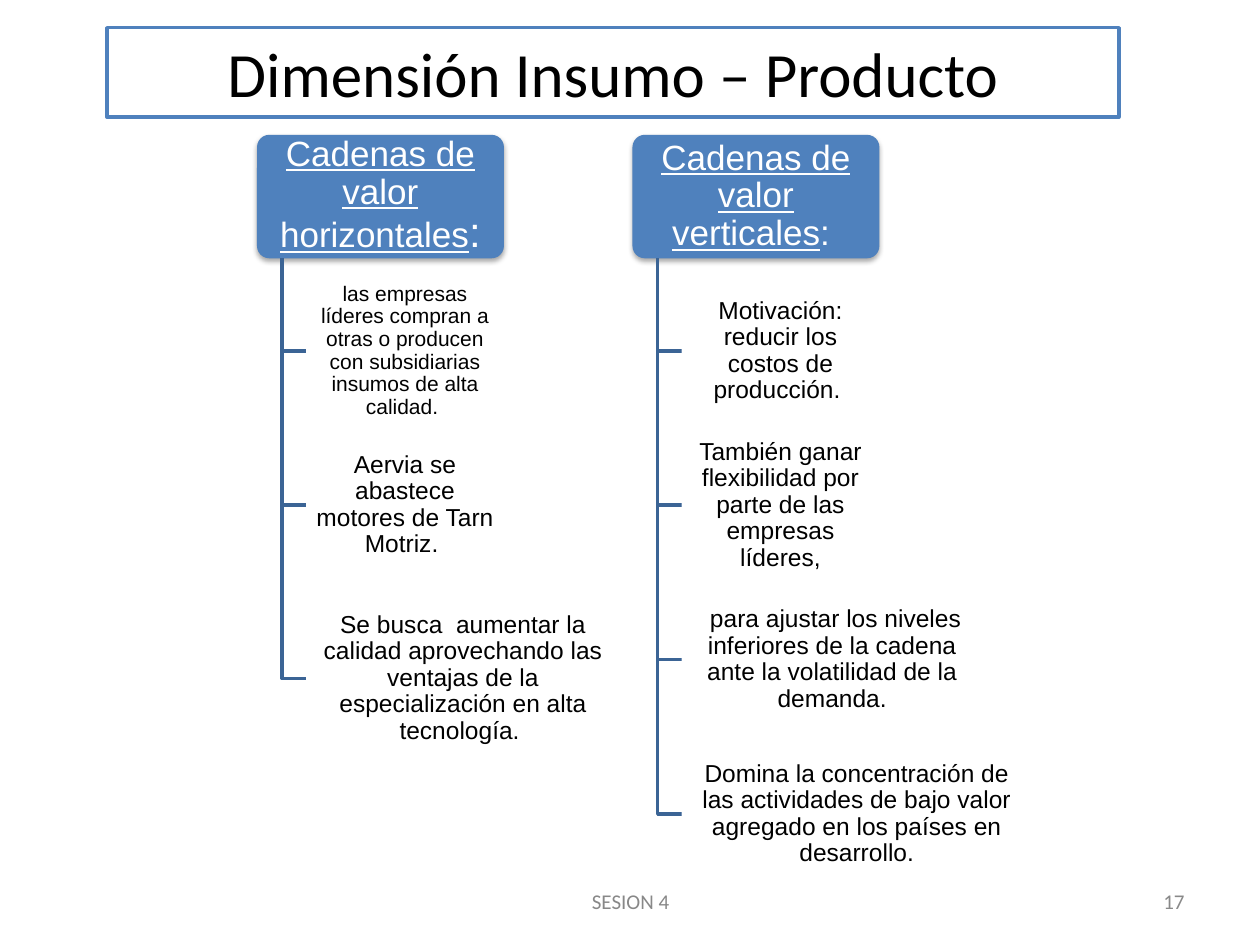
from lxml.etree import SubElement
from pptx import Presentation
from pptx.dml.color import RGBColor
from pptx.enum.shapes import MSO_SHAPE as Shape
from pptx.enum.text import MSO_ANCHOR as Anchor, PP_ALIGN as Align
from pptx.oxml.ns import qn
from pptx.util import Inches, Pt

TITLE = "Dimensión Insumo – Producto"
CHAINS = [
    {
        "head": [("Cadenas de valor horizontales", 20, True), (":", 24, False)],
        "cards": [
            ("las empresas líderes compran a otras o producen con subsidiarias "
             "insumos de alta calidad. ", 12, 1.57, 0.98),
            ("Aervia se abastece motores de Tarn Motriz. ", 14, 1.57, 0.98),
            ("Se busca  aumentar la calidad aprovechando las ventajas de la "
             "especialización en alta tecnología. ", 14, 2.49, 1.28),
        ],
    },
    {
        "head": [("Cadenas de valor verticales", 20, True), (": ", 20, False)],
        "cards": [
            ("Motivación: reducir los costos de producción. ", 14, 1.57, 0.98),
            ("También ganar flexibilidad por parte de las empresas líderes,",
             14, 1.57, 0.98),
            (" para ajustar los niveles inferiores de la cadena ante la "
             "volatilidad de la demanda.", 14, 2.39, 0.98),
            ("Domina la concentración de las actividades de bajo valor agregado "
             "en los países en desarrollo.", 14, 2.78, 0.98),
        ],
    },
]
FOOTERS = [
    ("17", 7.17, 2.33, Align.RIGHT, "898989"),
    ("SESION 4", 3.42, 3.17, Align.CENTER, "888888"),
]
LEFT, TOP, COLUMN_STEP = 2.04, 1.07, 2.98
HEAD_W, HEAD_H = 1.96, 0.98
ROW_STEP = HEAD_H * 1.25
STEM_INDENT, CARD_INDENT = 0.2, 0.39


def color(value):
    return RGBColor.from_string(value)


def place(item, left, top, width, height):
    item.left, item.top, item.width, item.height = map(
        Inches, (left, top, width, height))


def write(box, spans, ink, font="Arial", align=Align.CENTER, spacing=0.9,
          insets=(0.03, 0.02)):
    frame = box.text_frame
    side, edge = map(Inches, insets)
    settings = {"word_wrap": True, "vertical_anchor": Anchor.MIDDLE,
                "margin_left": side, "margin_right": side,
                "margin_top": edge, "margin_bottom": edge}
    for name, value in settings.items():
        setattr(frame, name, value)
    para = frame.paragraphs[0]
    para.alignment, para.line_spacing = align, spacing
    for text, size, underline in spans:
        span = para.add_run()
        span.text = text
        style = {"name": font, "size": Pt(size), "underline": underline}
        for name, value in style.items():
            setattr(span.font, name, value)
        span.font.color.rgb = color(ink)


def add_card(page, left, top, width, height, fill):
    card = page.shapes.add_shape(
        Shape.ROUNDED_RECTANGLE, *map(Inches, (left, top, width, height)))
    card.adjustments[0] = 0.1
    card.shadow.inherit = False
    card.fill.solid()
    card.fill.fore_color.rgb = color(fill)
    card.line.fill.background()
    return card


def set_alpha(parent, percent):
    SubElement(parent, qn("a:alpha"), val=str(percent * 1000))


def add_shadow(card):
    effects = card.element.spPr.find(qn("a:effectLst"))
    shadow = SubElement(effects, qn("a:outerShdw"), blurRad=str(Pt(3.1)),
                        dist=str(Pt(1.8)), dir="5400000", rotWithShape="0")
    set_alpha(SubElement(shadow, qn("a:srgbClr"), val="000000"), 35)


def add_elbow(page, left, top, right, bottom):
    builder = page.shapes.build_freeform(Inches(left), Inches(top))
    builder.add_line_segments(
        [(Inches(left), Inches(bottom)), (Inches(right), Inches(bottom))],
        close=False)
    elbow = builder.convert_to_shape()
    elbow.shadow.inherit = False
    elbow.fill.background()
    elbow.line.color.rgb = color("3B6495")
    elbow.line.width = Pt(2)


def add_chain(page, left, chain):
    head = add_card(page, left, TOP, HEAD_W, HEAD_H, "4F81BD")
    add_shadow(head)
    write(head, chain["head"], "FFFFFF", insets=(0.05, 0.03))
    for row, (text, size, width, height) in enumerate(chain["cards"], 1):
        top = TOP + row * ROW_STEP
        card_left = left + CARD_INDENT
        add_elbow(page, left + STEM_INDENT, TOP + HEAD_H,
                  card_left, top + height / 2)
        card = add_card(page, card_left, top, width, height, "FFFFFF")
        set_alpha(card.element.spPr.find(
            qn("a:solidFill")).find(qn("a:srgbClr")), 90)
        write(card, [(text, size, False)], "000000")


def main():
    deck = Presentation()
    deck.slide_width, deck.slide_height = Inches(10), Inches(7.5)
    page = deck.slides.add_slide(deck.slide_layouts[5])

    title = page.shapes.title
    place(title, 0.85, 0.22, 8.03, 0.71)
    title.fill.solid()
    title.fill.fore_color.rgb = color("FFFFFF")
    title.line.color.rgb = color("4F81BD")
    title.line.width = Pt(2)
    write(title, [(TITLE, 36, False)], "000000", "Calibri",
          spacing=1.0, insets=(0.1, 0.05))

    for column, chain in enumerate(CHAINS):
        add_chain(page, LEFT + column * COLUMN_STEP, chain)

    for text, left, width, align, ink in FOOTERS:
        box = page.shapes.add_textbox(
            *map(Inches, (left, 6.95, width, 0.4)))
        write(box, [(text, 12, False)], ink, "Calibri", align,
              spacing=1.0, insets=(0.1, 0.05))

    deck.save("out.pptx")


if __name__ == "__main__":
    main()
